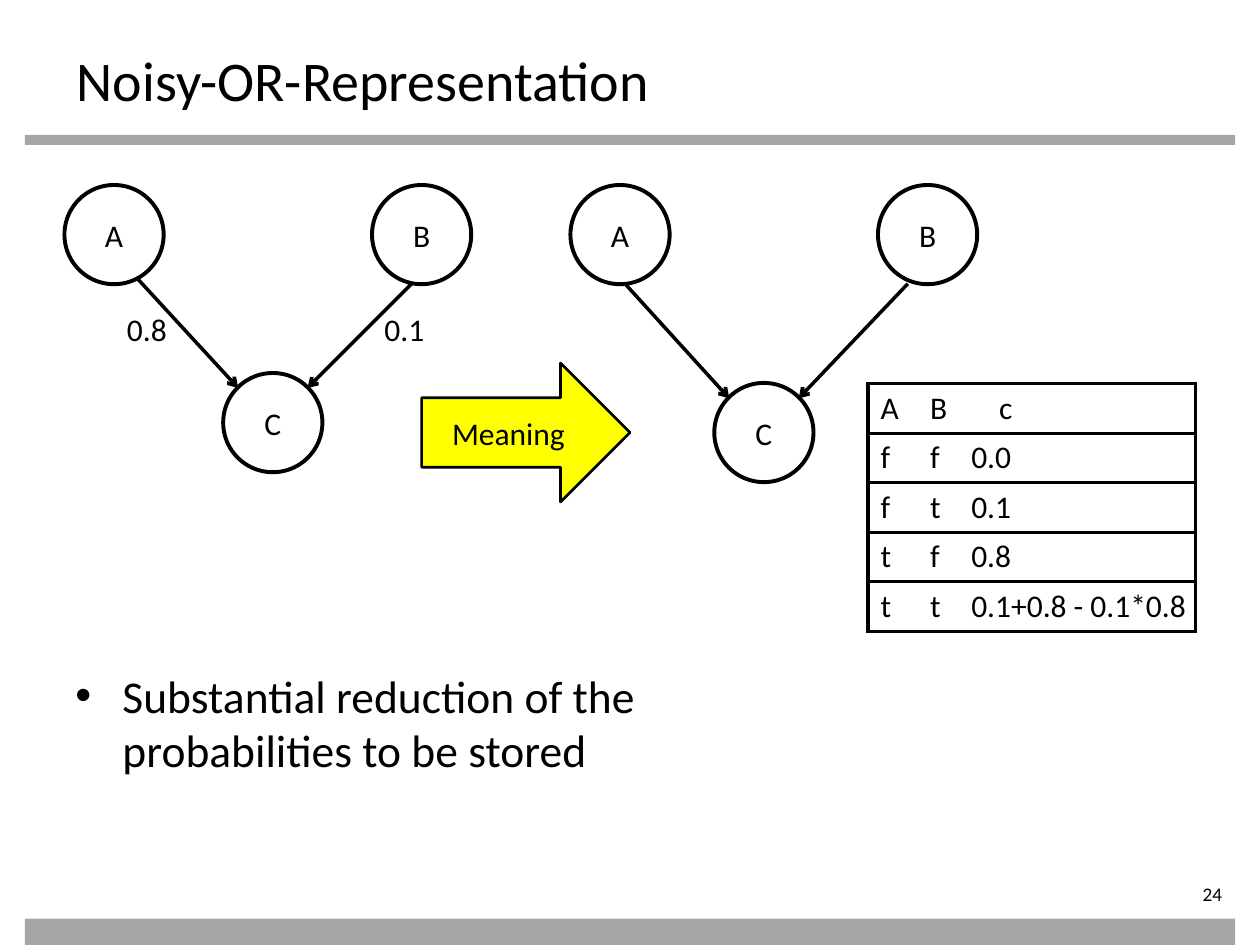
"""Build the Noisy-OR-Representation slide with two networks and a probability table."""
from lxml import etree
from pptx import Presentation
from pptx.dml.color import RGBColor
from pptx.enum.shapes import MSO_CONNECTOR, MSO_SHAPE
from pptx.enum.text import MSO_ANCHOR, PP_ALIGN
from pptx.oxml.ns import qn
from pptx.util import Cm, Pt

STRAIGHT = MSO_CONNECTOR.STRAIGHT
OVAL, RECTANGLE, RIGHT_ARROW = MSO_SHAPE.OVAL, MSO_SHAPE.RECTANGLE, MSO_SHAPE.RIGHT_ARROW
TOP, MIDDLE = MSO_ANCHOR.TOP, MSO_ANCHOR.MIDDLE
LEFT, CENTER, RIGHT = PP_ALIGN.LEFT, PP_ALIGN.CENTER, PP_ALIGN.RIGHT

COLORS = {"ink": "000000", "paper": "FFFFFF", "bar": "A6A6A6", "arrow": "FFFF00"}
FONT = "Calibri"
NODE_SIZE = 2

BARS = [(0.5, 2.72, 24.4, 0.2), (0.5, 18.52, 24.4, 0.53)]
TITLE = "Noisy-OR-Representation"
BULLET = "Substantial reduction of the probabilities to be stored"
PAGE_NUMBER = "24"
MEANING = "Meaning"
NODES = [
    ("A", 1.3, 3.73), ("B", 7.5, 3.73), ("C", 4.5, 7.52),
    ("A", 11.5, 3.73), ("B", 17.7, 3.73), ("C", 14.4, 7.72),
]
EDGES = [
    (2.7, 5.54, 4.8, 7.82), (8.3, 5.72, 6.2, 7.82),
    (12.6, 5.72, 14.7, 8.03), (18.3, 5.72, 16.1, 8.03),
]
WEIGHTS = [("0.8", 2.31, 6.12), ("0.1", 7.5, 6.12)]
TABLE_ROWS = [
    ("A", "B", "c"),
    ("f", "f", "0.0"),
    ("f", "t", "0.1"),
    ("t", "f", "0.8"),
    ("t", "t", "0.1+0.8 - 0.1*0.8"),
]
COLUMN_WIDTHS = [1, 0.83, 4.77]
TABLE_LEFT, TABLE_TOP, ROW_HEIGHT = 17.5, 7.73, 1
CELL_MARGIN, RESULT_HEADER_MARGIN = 0.25, 0.81


def color(name):
    return RGBColor.from_string(COLORS[name])


def write(frame, text, size=18, align=LEFT):
    paragraph = frame.paragraphs[0]
    paragraph.alignment = align
    run = paragraph.add_run()
    run.text = text
    run.font.name = FONT
    run.font.size = Pt(size)
    run.font.color.rgb = color("ink")
    return paragraph


def add_text(slide, box, text, size=18, align=LEFT, wrap=True):
    frame = slide.shapes.add_textbox(*map(Cm, box)).text_frame
    frame.word_wrap = wrap
    frame.vertical_anchor = TOP
    write(frame, text, size, align)
    return frame


def add_filled(slide, kind, box, fill, line_width=None, text=None):
    shape = slide.shapes.add_shape(kind, *map(Cm, box))
    shape.shadow.inherit = False
    shape.fill.solid()
    shape.fill.fore_color.rgb = color(fill)
    if line_width:
        shape.line.color.rgb = color("ink")
        shape.line.width = Pt(line_width)
    else:
        shape.line.fill.background()
    if text:
        shape.text_frame.vertical_anchor = MIDDLE
        write(shape.text_frame, text, align=CENTER)


def add_edge(slide, ends):
    connector = slide.shapes.add_connector(STRAIGHT, *map(Cm, ends))
    connector.line.color.rgb = color("ink")
    connector.line.width = Pt(2)
    properties = connector._element.spPr
    etree.SubElement(properties.find(qn("a:ln")), qn("a:tailEnd"), type="arrow")
    etree.SubElement(properties, qn("a:effectLst"))


def set_border(cell, side, width):
    line = etree.SubElement(cell._tc.get_or_add_tcPr(), qn(f"a:ln{side}"), w=str(Pt(width)))
    if width:
        fill = etree.SubElement(line, qn("a:solidFill"))
        etree.SubElement(fill, qn("a:srgbClr"), val=COLORS["ink"])
    else:
        etree.SubElement(line, qn("a:noFill"))


def add_probability_table(slide):
    row_count, column_count = len(TABLE_ROWS), len(COLUMN_WIDTHS)
    box = (TABLE_LEFT, TABLE_TOP, sum(COLUMN_WIDTHS), row_count * ROW_HEIGHT)
    table = slide.shapes.add_table(row_count, column_count, *map(Cm, box)).table
    table.first_row = table.horz_banding = False
    for column, width in zip(table.columns, COLUMN_WIDTHS):
        column.width = Cm(width)
    for row_index, values in enumerate(TABLE_ROWS):
        table.rows[row_index].height = Cm(ROW_HEIGHT)
        for column_index, value in enumerate(values):
            cell = table.cell(row_index, column_index)
            last_column = column_index == column_count - 1
            header_result = row_index == 0 and last_column
            cell.margin_left = Cm(RESULT_HEADER_MARGIN if header_result else CELL_MARGIN)
            cell.margin_right = cell.margin_top = cell.margin_bottom = 0
            cell.vertical_anchor = MIDDLE
            set_border(cell, "L", 2.25 if column_index == 0 else 0)
            set_border(cell, "R", 2.25 if last_column else 0)
            set_border(cell, "T", 2.25 if row_index == 0 else 2)
            set_border(cell, "B", 2.25 if row_index == row_count - 1 else 2)
            cell.fill.solid()
            cell.fill.fore_color.rgb = color("paper")
            write(cell.text_frame, value)


def add_bullet(slide):
    frame = add_text(slide, (1.27, 13.34, 13.82, 3.81), BULLET, 26)
    properties = frame.paragraphs[0]._p.get_or_add_pPr()
    properties.set("marL", str(Cm(0.95)))
    properties.set("indent", str(Cm(-0.95)))
    etree.SubElement(properties, qn("a:buFont"), typeface="Arial")
    etree.SubElement(properties, qn("a:buChar"), char="•")


def main():
    presentation = Presentation()
    presentation.slide_width, presentation.slide_height = Cm(25.4), Cm(19.05)
    slide = presentation.slides.add_slide(presentation.slide_layouts[6])
    for bar in BARS:
        add_filled(slide, RECTANGLE, bar, "bar")
    title = add_text(slide, (1.3, 0.71, 22.86, 1.4), TITLE, 32)
    title.margin_top = Cm(0.2)
    add_bullet(slide)
    number = add_text(slide, (22.1, 17.78, 2.79, 0.56), PAGE_NUMBER, 11, RIGHT)
    number.margin_left = number.margin_top = number.margin_bottom = 0
    for ends in EDGES:
        add_edge(slide, ends)
    for name, left, top in NODES:
        add_filled(slide, OVAL, (left, top, NODE_SIZE, NODE_SIZE), "paper", 2.25, name)
    for weight, left, top in WEIGHTS:
        add_text(slide, (left, top, 1.32, 1.02), weight, wrap=False)
    add_probability_table(slide)
    add_filled(slide, RIGHT_ARROW, (8.5, 7.32, 4.2, 2.8), "arrow", 1.5, MEANING)
    presentation.save("out.pptx")


if __name__ == "__main__":
    main()
